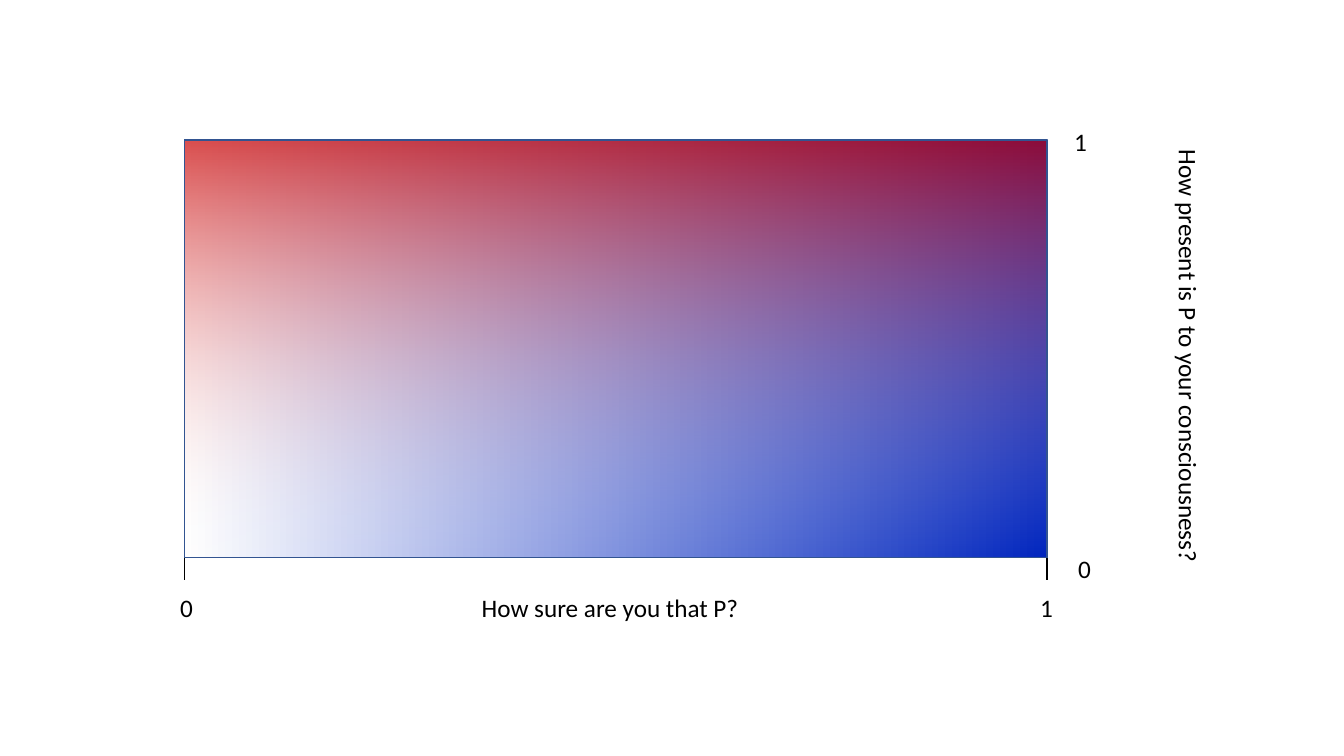
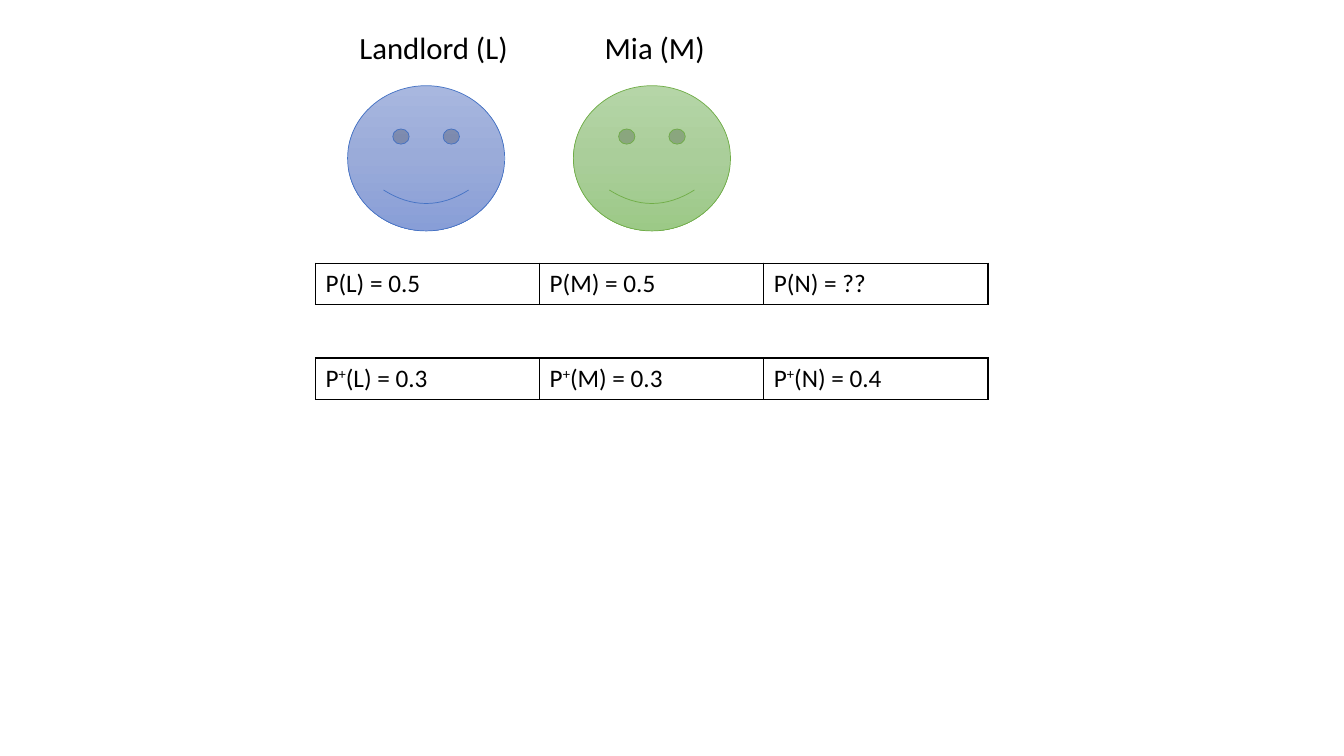
"""Build two slides: a certainty and presence map, and two persons with their odds."""
from pptx import Presentation
from pptx import util as u
from pptx.dml.color import RGBColor
from pptx.enum import shapes, text
from pptx.oxml import parse_xml
from pptx.oxml.ns import nsdecls, qn

HUES = {
    "ink": "000000", "white": "FFFFFF", "blue": "0226BE", "red": "CA0202",
    "edge": "325491", "sky": "4472C4", "leaf": "70AD47",
    "sky1": "A8B7DF", "sky2": "9AABD9", "sky3": "889ED7",
    "leaf1": "B5D5A7", "leaf2": "AACE9A", "leaf3": "9CC987",
}


class Deck:
    font = "Calibri"
    size = 18

    def __init__(self, wide, high):
        self.show = Presentation()
        self.show.slide_width = u.Cm(wide)
        self.show.slide_height = u.Cm(high)

    def page(self):
        self.slide = self.show.slides.add_slide(self.show.slide_layouts[6])

    def hue(self, name):
        return RGBColor.from_string(HUES[name])

    def style(self, para, size):
        para.font.name = self.font
        para.font.size = u.Pt(size)
        para.font.color.rgb = self.hue("ink")

    def label(self, words, x, y, wide, high=1.02, size=size, turn=0):
        box = self.slide.shapes.add_textbox(*map(u.Cm, (x, y, wide, high)))
        box.rotation = turn
        frame = box.text_frame
        frame.word_wrap = True
        frame.auto_size = text.MSO_AUTO_SIZE.SHAPE_TO_FIT_TEXT
        frame.text = words
        self.style(frame.paragraphs[0], size)

    def line(self, *ends):
        line = self.slide.shapes.add_connector(
            shapes.MSO_CONNECTOR.STRAIGHT, *map(u.Cm, ends))
        line.line.color.rgb = self.hue("ink")
        line.line.width = u.Pt(1)
        line.element.spPr.append(parse_xml(f'<a:effectLst {nsdecls("a")}/>'))

    def shade(self, kind, area, stops, edge, width=1, angle=90, turn=0):
        form = self.slide.shapes.add_shape(kind, *map(u.Cm, area))
        form.shadow.inherit = False
        form.rotation = turn
        form.line.color.rgb = self.hue(edge)
        form.line.width = u.Pt(width)
        form.fill.gradient()
        marks = "".join(
            f'<a:gs pos="{spot * 1000}"><a:srgbClr val="{HUES[name]}">'
            f'<a:alpha val="{alpha * 1000}"/></a:srgbClr></a:gs>'
            for spot, name, alpha in stops)
        props = form.element.spPr
        props.replace(props.find(qn("a:gradFill")), parse_xml(
            f'<a:gradFill {nsdecls("a")} rotWithShape="1"><a:gsLst>{marks}</a:gsLst>'
            f'<a:lin ang="{angle * 60000}" scaled="0"/></a:gradFill>'))

    def table(self, cells, x, y, wide, high):
        area = (x, y, wide * len(cells), high)
        table = self.slide.shapes.add_table(1, len(cells), *map(u.Cm, area)).table
        table.first_row = table.horz_banding = False
        for cell, parts in zip(table.rows[0].cells, cells):
            para = cell.text_frame.paragraphs[0]
            for part in parts:
                run = para.add_run()
                run.text = part
                if part == "+":
                    run.font._element.set("baseline", "30000")
            self.style(para, self.size)
            cell.fill.background()
            self.frame(cell)

    def frame(self, cell):
        props = cell._tc.get_or_add_tcPr()
        for spot, side in enumerate("LRTB"):
            props.insert(spot, parse_xml(
                f'<a:ln{side} {nsdecls("a")} w="12700"><a:solidFill>'
                f'<a:srgbClr val="{HUES["ink"]}"/></a:solidFill></a:ln{side}>'))


def draw_map(deck):
    deck.page()
    left, top, wide, high = area = (4.65, 3.53, 21.74, 10.52)
    right, base = left + wide, top + high
    deck.line(left, base, right, base)
    for x in (left, right):
        deck.line(x, base, x, base + 0.56)
    for words, x, y in (("0", 4.29, 14.81), ("1", 25.96, 14.81),
                        ("0", 26.92, 13.82), ("1", 26.82, 3.05)):
        deck.label(words, x, y, 0.86)
    deck.label("How sure are you that P?", 11.89, 14.81, 7.85)
    rect = shapes.MSO_SHAPE.RECTANGLE
    deck.shade(rect, area, [(0, "white", 100), (100, "blue", 100)], "edge", angle=0)
    deck.label("How present is P to your consciousness?", 24.38, 8.59, 11.15, turn=90)
    deck.shade(rect, area, [(0, "white", 0), (100, "red", 70)], "edge", turn=180)


def draw_odds(deck):
    deck.page()
    for name, tone, x, start, wide in (("Landlord (L)", "sky", 8.76, 8.81, 4.6),
                                       ("Mia (M)", "leaf", 14.45, 14.99, 3.96)):
        stops = [(spot, f"{tone}{step}", 100)
                 for step, spot in enumerate((0, 50, 100), 1)]
        deck.shade(shapes.MSO_SHAPE.SMILEY_FACE, (x, 2.16, 3.96, 3.66),
                   stops, tone, width=0.5)
        deck.label(name, start, 0.61, wide, 1.19, size=22)
    left, wide, high = 7.95, 5.65, 1.04
    for y, sign, odds in ((6.63, [], ("0.5", "0.5", "??")),
                          (9.02, ["+"], ("0.3", "0.3", "0.4"))):
        cells = [["P", *sign, f"({who}) = {odd}"] for who, odd in zip("LMN", odds)]
        deck.table(cells[:2], left, y, wide, high)
        deck.table(cells[2:], left + 2 * wide, y, wide, high)


def main():
    deck = Deck(33.87, 19.05)
    draw_map(deck)
    draw_odds(deck)
    deck.show.save("out.pptx")


if __name__ == "__main__":
    main()
